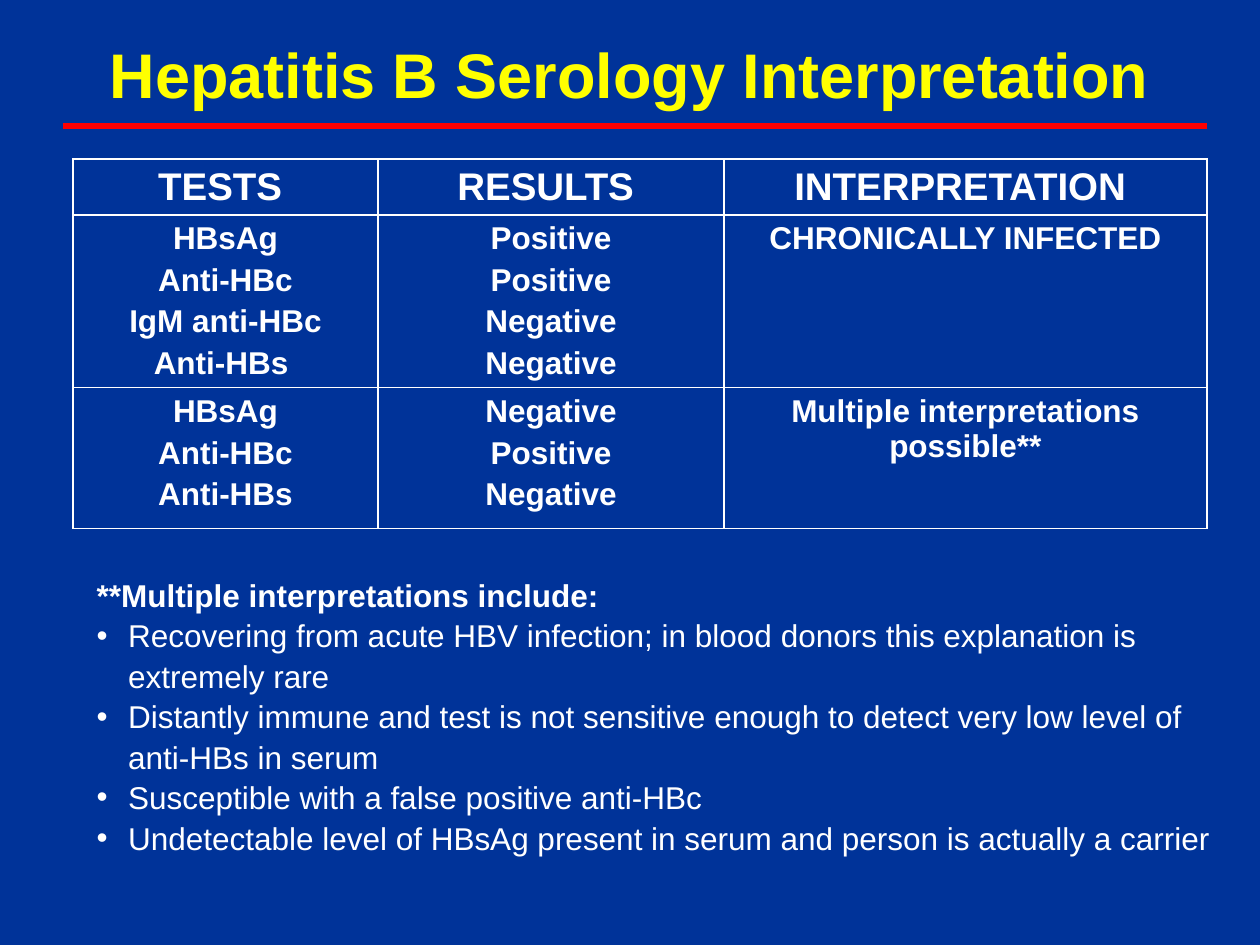
from dataclasses import dataclass

from lxml.etree import SubElement
from pptx import Presentation
from pptx.dml.color import RGBColor
from pptx.enum.shapes import MSO_CONNECTOR
from pptx.enum.text import MSO_ANCHOR, MSO_AUTO_SIZE, PP_ALIGN
from pptx.oxml.ns import qn
from pptx.util import Emu, Pt

PX_PER_INCH = 126
FONT = "Arial"
COLORS = {"background": "003399", "title": "FFFF00", "text": "FFFFFF", "rule": "FF0000"}


@dataclass(frozen=True)
class Box:
    left: int
    top: int
    width: int
    height: int


@dataclass(frozen=True)
class SerologyRow:
    height: int
    size: int
    tests: list[str]
    results: list[str]
    interpretation: list[str]


TITLE_BOX = Box(94, 21, 1071, 105)
TABLE_BOX = Box(73, 159, 1134, 369)
NOTES_BOX = Box(84, 567, 1156, 315)
COLUMN_WIDTHS = [305, 346, 483]
ROWS = [
    SerologyRow(56, 22, ["TESTS "], ["RESULTS "], ["INTERPRETATION "]),
    SerologyRow(
        172, 18,
        ["HBsAg", "Anti-HBc", "IgM anti-HBc", "Anti-HBs "],
        ["Positive", "Positive", "Negative", "Negative"],
        ["CHRONICALLY INFECTED"],
    ),
    SerologyRow(
        141, 18,
        ["HBsAg", "Anti-HBc", "Anti-HBs"],
        ["Negative", "Positive", "Negative"],
        ["Multiple interpretations possible**"],
    ),
]
NOTES_HEADING = "**Multiple interpretations include:"
EXPLANATIONS = [
    "Recovering from acute HBV infection; in blood donors this explanation is extremely rare",
    "Distantly immune and test is not sensitive enough to detect very low level of anti-HBs in serum",
    "Susceptible with a false positive anti-HBc",
    "Undetectable level of HBsAg present in serum and person is actually a carrier",
]


def px(length: int) -> Emu:
    return Emu(round(length * 914400 / PX_PER_INCH))


def color(name: str) -> RGBColor:
    return RGBColor.from_string(COLORS[name])


def place(shape, box: Box) -> None:
    shape.left, shape.top = px(box.left), px(box.top)
    shape.width, shape.height = px(box.width), px(box.height)


def style_runs(paragraph, size: int, color_name: str, bold: bool) -> None:
    for run in paragraph.runs:
        run.font.name = FONT
        run.font.size = Pt(size)
        run.font.bold = bold
        run.font.color.rgb = color(color_name)


def add_title(slide) -> None:
    title = slide.shapes.title
    place(title, TITLE_BOX)
    frame = title.text_frame
    frame.text = "Hepatitis B Serology Interpretation"
    frame.auto_size = MSO_AUTO_SIZE.NONE
    frame.vertical_anchor = MSO_ANCHOR.MIDDLE
    frame.paragraphs[0].alignment = PP_ALIGN.CENTER
    style_runs(frame.paragraphs[0], 36, "title", True)


def add_rule(slide) -> None:
    rule = slide.shapes.add_connector(
        MSO_CONNECTOR.STRAIGHT, px(63), px(126), px(1207), px(126)
    )
    rule.line.color.rgb = color("rule")
    rule.line.width = Pt(3)
    SubElement(rule._element.spPr, qn("a:effectLst"))


def add_borders(cell) -> None:
    properties = cell._tc.get_or_add_tcPr()
    for side in ("lnL", "lnR", "lnT", "lnB"):
        border = SubElement(properties, qn(f"a:{side}"), w=str(Pt(1)))
        fill = SubElement(border, qn("a:solidFill"))
        SubElement(fill, qn("a:srgbClr"), val=COLORS["text"])


def fill_cell(cell, lines: list[str], size: int) -> None:
    add_borders(cell)
    cell.fill.background()
    cell.text_frame.text = "\n".join(lines)
    for paragraph in cell.text_frame.paragraphs:
        paragraph.alignment = PP_ALIGN.CENTER
        paragraph.space_before = Pt(size * 0.2)
        style_runs(paragraph, size, "text", True)


def add_serology_table(slide) -> None:
    table = slide.shapes.add_table(
        len(ROWS), len(COLUMN_WIDTHS), px(TABLE_BOX.left), px(TABLE_BOX.top),
        px(TABLE_BOX.width), px(TABLE_BOX.height),
    ).table
    table.first_row = table.horz_banding = False
    for column, width in zip(table.columns, COLUMN_WIDTHS):
        column.width = px(width)
    for table_row, row in zip(table.rows, ROWS):
        table_row.height = px(row.height)
        contents = (row.tests, row.results, row.interpretation)
        for cell, lines in zip(table_row.cells, contents):
            fill_cell(cell, lines, row.size)


def add_notes(slide) -> None:
    notes = slide.placeholders[1]
    place(notes, NOTES_BOX)
    frame = notes.text_frame
    frame.text = "\n".join([NOTES_HEADING, *EXPLANATIONS])
    frame.word_wrap = True
    frame.auto_size = MSO_AUTO_SIZE.NONE
    for index, paragraph in enumerate(frame.paragraphs):
        is_heading = index == 0
        paragraph.space_before = Pt(0)
        paragraph.line_spacing = 1.07
        style_runs(paragraph, 18, "text", is_heading)
        properties = paragraph._p.get_or_add_pPr()
        properties.set("marL", str(Pt(18)))
        properties.set("indent", str(-Pt(18)))
        if is_heading:
            SubElement(properties, qn("a:buNone"))
        else:
            SubElement(properties, qn("a:buFont"), typeface=FONT)
            SubElement(properties, qn("a:buChar"), char="•")


def main() -> None:
    presentation = Presentation()
    presentation.slide_width, presentation.slide_height = px(1260), px(945)
    slide = presentation.slides.add_slide(presentation.slide_layouts[1])
    slide.background.fill.solid()
    slide.background.fill.fore_color.rgb = color("background")
    add_title(slide)
    add_serology_table(slide)
    add_notes(slide)
    add_rule(slide)
    presentation.save("out.pptx")


if __name__ == "__main__":
    main()
